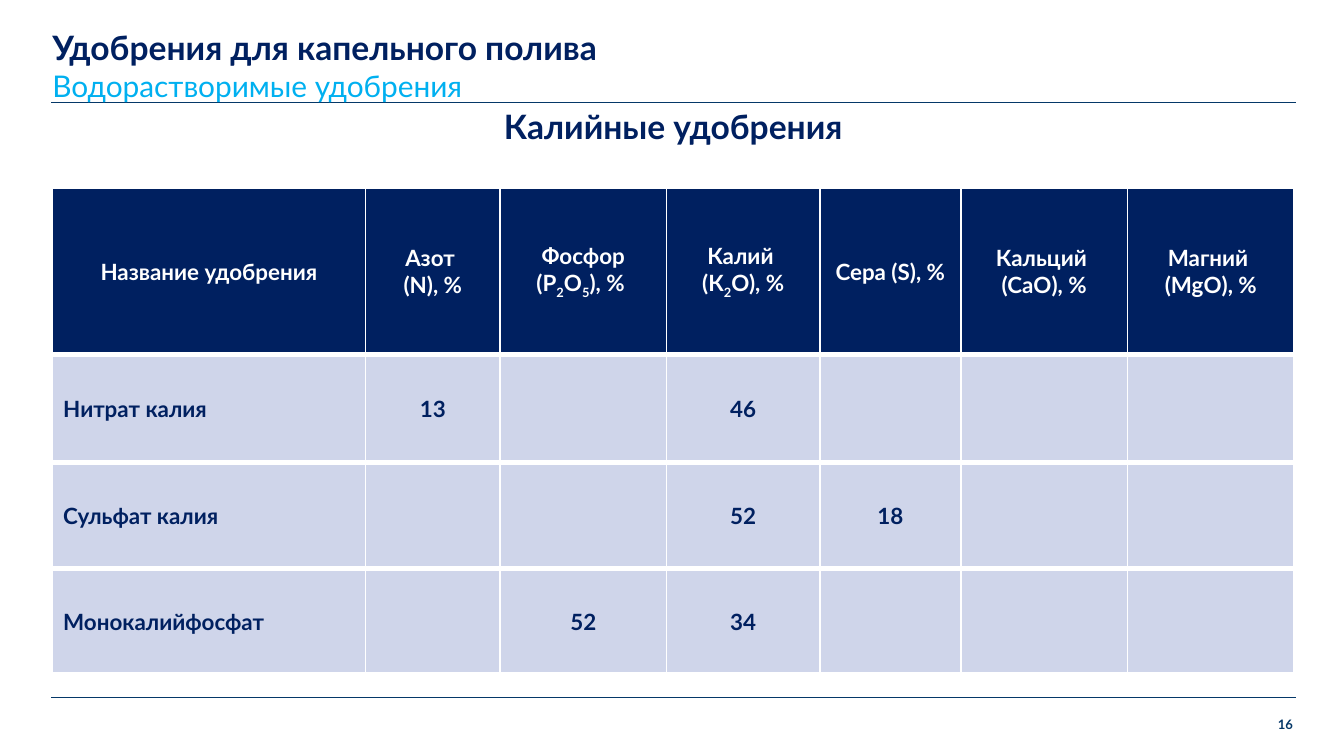
from lxml.etree import SubElement
from pptx import Presentation
from pptx.dml.color import RGBColor
from pptx.enum.shapes import MSO_CONNECTOR
from pptx.enum.text import MSO_ANCHOR, PP_ALIGN
from pptx.oxml.ns import qn
from pptx.util import Inches, Pt

NAVY = RGBColor(0x00, 0x20, 0x60)
RULE_BLUE = RGBColor(0x05, 0x38, 0x68)
CYAN = RGBColor(0x00, 0xB0, 0xF0)
PALE_BLUE = RGBColor(0xCF, 0xD5, 0xEA)
WHITE = RGBColor(0xFF, 0xFF, 0xFF)
FONT = "Lato"

TITLE = "Удобрения для капельного полива"
SUBTITLE = "Водорастворимые удобрения"
TABLE_TITLE = "Калийные удобрения"
PAGE_NUMBER = "16"

# Each header is a list of paragraphs; text between underscores is subscript
# and a newline is a line break inside the paragraph.
HEADERS = [
    ["Название удобрения"],
    ["Азот \n(N), %"],
    ["Фосфор (Р_2_О_5_), % "],
    ["Калий ", "(К_2_О), %"],
    ["Сера (S), %"],
    ["Кальций ", "(CaО), %"],
    ["Магний ", "(MgО), %"],
]
FERTILIZERS = [
    ["Нитрат калия", "13", "", "46", "", "", ""],
    ["Сульфат калия", "", "", "52", "18", "", ""],
    ["Монокалийфосфат", "", "52", "34", "", "", ""],
]
COLUMN_WIDTHS = [2.33, 1, 1.24, 1.14, 1.05, 1.24, 1.24]
ROW_HEIGHTS = [1.24, 0.8, 0.79, 0.79]

SLIDE_WIDTH = 10
SLIDE_HEIGHT = SLIDE_WIDTH * 9 / 16
LEFT = 0.39
RULE_SPAN = (0.38, 9.64)
RULE_HEIGHTS = (0.76, 5.19)


def add_run(paragraph, text, size, color, bold=True):
    run = paragraph.add_run()
    run.text = text
    run.font.name = FONT
    run.font.size = Pt(size)
    run.font.bold = bold
    run.font.color.rgb = color
    return run


def add_text_frame(slide, left, top, width, height, wrap=True):
    """Add a text box without insets and return its text frame."""
    box = slide.shapes.add_textbox(*map(Inches, (left, top, width, height)))
    frame = box.text_frame
    frame.word_wrap = wrap
    frame.margin_left = frame.margin_right = 0
    frame.margin_top = frame.margin_bottom = 0
    return frame


def add_rule(slide, y):
    start, end = map(Inches, RULE_SPAN)
    rule = slide.shapes.add_connector(
        MSO_CONNECTOR.STRAIGHT, start, Inches(y), end, Inches(y))
    rule.line.color.rgb = RULE_BLUE
    rule.line.width = Pt(0.25)
    SubElement(rule._element.spPr, qn("a:effectLst"))


def set_borders(cell, **widths):
    """Draw white cell borders; must run before the fill is set."""
    properties = cell._tc.get_or_add_tcPr()
    for side, width in widths.items():
        line = SubElement(properties, qn(f"a:ln{side}"), w=str(Pt(width)))
        fill = SubElement(line, qn("a:solidFill"))
        SubElement(fill, qn("a:srgbClr"), val=str(WHITE))


def add_formula_text(paragraph, text, color):
    """Add 12 pt runs, with line breaks and subscripts as marked in the text."""
    for line_index, line in enumerate(text.split("\n")):
        if line_index:
            paragraph.add_line_break()
        for part_index, part in enumerate(line.split("_")):
            if part:
                run = add_run(paragraph, part, 12, color)
                if part_index % 2:
                    run._r.get_or_add_rPr().set("baseline", "-25000")


def fill_cell(cell, texts, is_header, alignment):
    set_borders(cell, L=1, R=1, T=1 if is_header else 3, B=3)
    cell.fill.solid()
    cell.fill.fore_color.rgb = NAVY if is_header else PALE_BLUE
    cell.vertical_anchor = MSO_ANCHOR.MIDDLE
    cell.margin_left = cell.margin_right = Inches(0.07 if is_header else 0.08)
    cell.margin_top = cell.margin_bottom = Inches(0.04)
    frame = cell.text_frame
    for index, text in enumerate(texts):
        paragraph = frame.add_paragraph() if index else frame.paragraphs[0]
        paragraph.alignment = alignment
        add_formula_text(paragraph, text, WHITE if is_header else NAVY)


def add_fertilizer_table(slide):
    rows = [HEADERS] + [[[text] for text in row] for row in FERTILIZERS]
    table = slide.shapes.add_table(
        len(rows), len(HEADERS), Inches(LEFT), Inches(1.4),
        Inches(sum(COLUMN_WIDTHS)), Inches(sum(ROW_HEIGHTS))).table
    table.horz_banding = False
    for column, width in zip(table.columns, COLUMN_WIDTHS):
        column.width = Inches(width)
    for row, height in zip(table.rows, ROW_HEIGHTS):
        row.height = Inches(height)
    for row_index, row in enumerate(rows):
        for column_index, texts in enumerate(row):
            is_header = row_index == 0
            is_name = column_index == 0 and not is_header
            fill_cell(table.cell(row_index, column_index), texts, is_header,
                      PP_ALIGN.LEFT if is_name else PP_ALIGN.CENTER)


def main():
    presentation = Presentation()
    presentation.slide_width = Inches(SLIDE_WIDTH)
    presentation.slide_height = Inches(SLIDE_HEIGHT)
    slide = presentation.slides.add_slide(presentation.slide_layouts[6])

    for y in RULE_HEIGHTS:
        add_rule(slide, y)

    heading = add_text_frame(slide, LEFT, 0.2, 9.25, 0.62)
    add_run(heading.paragraphs[0], TITLE, 18, NAVY)
    add_run(heading.add_paragraph(), SUBTITLE, 16, CYAN, bold=False)

    number = add_text_frame(slide, 9.48, 5.33, 0.14, 0.14, wrap=False)
    number.paragraphs[0].alignment = PP_ALIGN.RIGHT
    add_run(number.paragraphs[0], PAGE_NUMBER, 7, RULE_BLUE)

    table_title = add_text_frame(slide, 3.56, 0.85, 2.9, 0.3, wrap=False)
    table_title.margin_top = table_title.margin_bottom = Inches(0.05)
    table_title.paragraphs[0].alignment = PP_ALIGN.CENTER
    table_title.paragraphs[0].line_spacing = Pt(13.5)
    add_run(table_title.paragraphs[0], TABLE_TITLE, 18, NAVY)

    add_fertilizer_table(slide)
    presentation.save("out.pptx")


if __name__ == "__main__":
    main()
